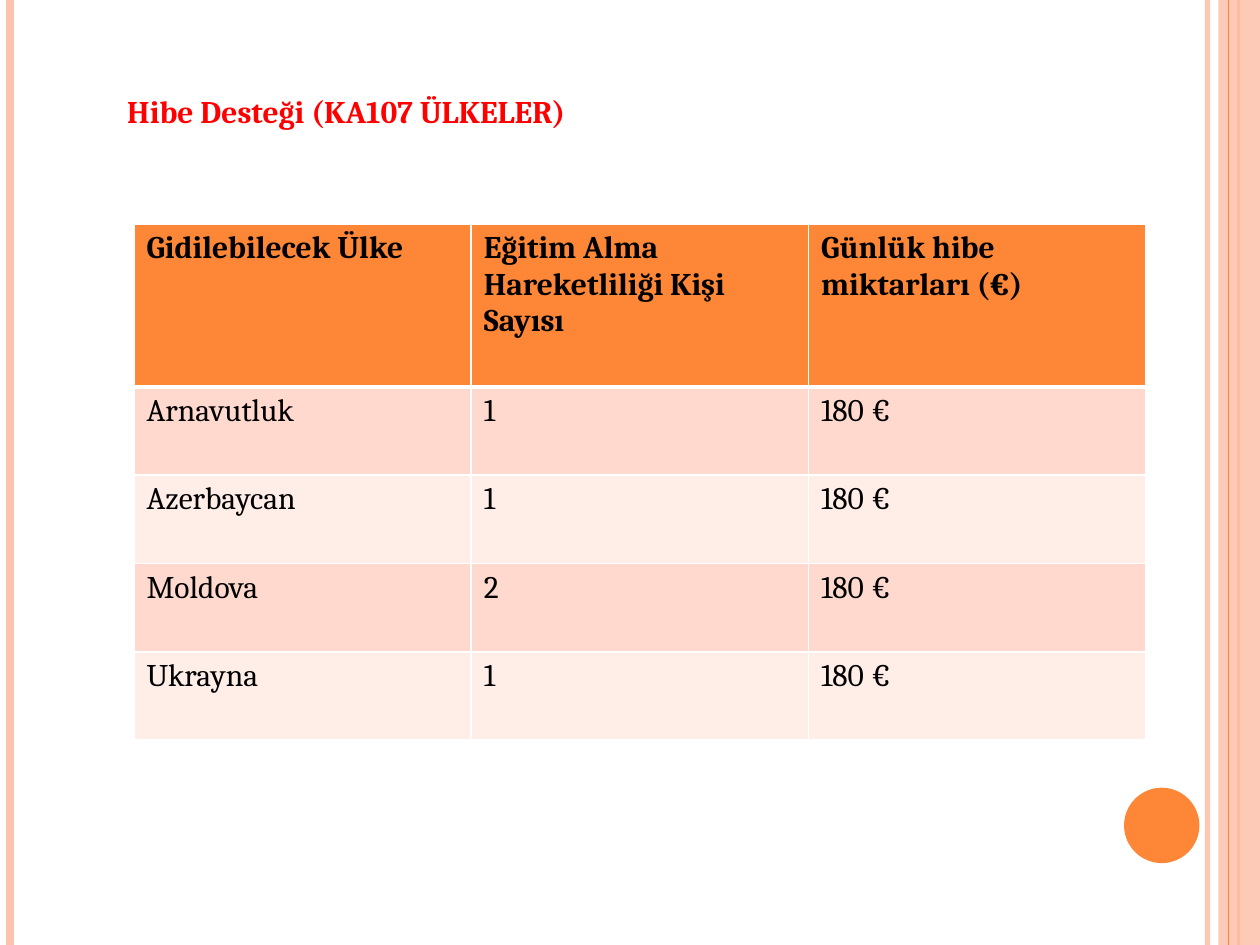
from lxml import etree
from pptx import Presentation
from pptx import util as u
from pptx.dml.color import RGBColor
from pptx.enum import shapes, text
from pptx.oxml.ns import qn

COLORS = {
    "orange": "FE8637", "peach": "FEC3AE", "red": "FF0000", "black": "000000",
    "white": "FFFFFF", "band_dark": "FFD9CE", "band_light": "FFEDE8",
}
FONT = "Cambria"
ROWS = [
    ("Gidilebilecek Ülke", "Eğitim Alma Hareketliliği Kişi Sayısı",
     "Günlük hibe miktarları (€)"),
    ("Arnavutluk", "1", "180 €"),
    ("Azerbaycan", "1", "180 €"),
    ("Moldova", "2", "180 €"),
    ("Ukrayna", "1", "180 €"),
]


def rgb(name):
    """Return the named palette colour."""
    return RGBColor.from_string(COLORS[name])


def set_alpha(fill, percent):
    """Make a solid fill or line partly transparent."""
    clr = fill._xPr.find(qn("a:solidFill"))[0]
    etree.SubElement(clr, qn("a:alpha")).set("val", str(percent * 1000))


def style_text(p, size, color, bold):
    """Format every run of a paragraph."""
    for r in p.runs:
        r.font.name = FONT
        r.font.size = u.Pt(size)
        r.font.bold = bold
        r.font.color.rgb = rgb(color)


def add_stripe(s, x, height, color, width, alpha=None):
    """Draw a full-height vertical line."""
    c = s.shapes.add_connector(shapes.MSO_CONNECTOR.STRAIGHT, x, 0, x, height)
    c.line.color.rgb = rgb(color)
    c.line.width = u.Pt(width)
    if alpha:
        set_alpha(c.line.fill, alpha)
    etree.SubElement(c._element.spPr, qn("a:effectLst"))


def add_solid(s, kind, color, left, top, width, height):
    """Add a filled preset shape without an outline."""
    sp = s.shapes.add_shape(kind, left, top, width, height)
    sp.shadow.inherit = False
    sp.fill.solid()
    sp.fill.fore_color.rgb = rgb(color)
    sp.line.fill.background()
    return sp


def add_frame(s, left, top, width, height):
    """Draw the edge stripes and the disc within the given box."""
    right = left + width
    add_stripe(s, right - u.Cm(1.06), height, "peach", 3, 93)
    add_stripe(s, left + u.Cm(0.21), height, "peach", 4.5)
    add_stripe(s, right - u.Cm(0.43), height, "orange", 1.5)
    band = add_solid(s, shapes.MSO_SHAPE.RECTANGLE, "peach",
                     right - u.Cm(0.84), top, u.Cm(0.84), height)
    set_alpha(band.fill, 87)
    add_stripe(s, right - u.Cm(0.64), height, "orange", 0.75)
    add_solid(s, shapes.MSO_SHAPE.OVAL, "orange", right - u.Cm(2.74),
              top + u.Cm(15.88), u.Cm(1.52), u.Cm(1.52))


def add_title(s, left, top, width, height):
    """Place and format the slide title."""
    sp = s.shapes.title
    sp.left, sp.top, sp.width, sp.height = left, top, width, height
    tf = sp.text_frame
    tf.text = "Hibe Desteği (KA107 ÜLKELER)"
    tf.word_wrap = False
    tf.auto_size = text.MSO_AUTO_SIZE.SHAPE_TO_FIT_TEXT
    tf.vertical_anchor = text.MSO_ANCHOR.TOP
    p = tf.paragraphs[0]
    p.alignment = text.PP_ALIGN.LEFT
    style_text(p, 18, "red", True)


def set_borders(cell, widths):
    """Give a cell white borders: left, right, top and bottom in points."""
    tc_pr = cell._tc.get_or_add_tcPr()
    for i, (side, width) in enumerate(zip("LRTB", widths)):
        ln = etree.Element(qn(f"a:ln{side}"), w=str(u.Pt(width)))
        fill = etree.SubElement(ln, qn("a:solidFill"))
        etree.SubElement(fill, qn("a:srgbClr")).set("val", COLORS["white"])
        tc_pr.insert(i, ln)


def add_grants(s, left, top, width, height):
    """Build the table of countries, places and daily grants."""
    tbl = s.shapes.add_table(len(ROWS), len(ROWS[0]), left, top, width, height).table
    row_height = u.Cm(1.78)
    for col in tbl.columns:
        col.width = width // len(ROWS[0])
    for i, values in enumerate(ROWS):
        header = i == 0
        body_rows = len(ROWS) - 1
        tbl.rows[i].height = height - body_rows * row_height if header else row_height
        color = "orange" if header else ("band_dark" if i % 2 else "band_light")
        for j, value in enumerate(values):
            cell = tbl.cell(i, j)
            cell.text = value
            style_text(cell.text_frame.paragraphs[0], 18, "black", header)
            cell.fill.solid()
            cell.fill.fore_color.rgb = rgb(color)
            set_borders(cell, (1, 1, 3 if i == 1 else 1, 3 if header else 1))


def main():
    """Create the presentation."""
    prs = Presentation()
    prs.slide_width, prs.slide_height = u.Cm(25.4), u.Cm(19.05)
    s = prs.slides.add_slide(prs.slide_layouts[5])
    s.background.fill.solid()
    s.background.fill.fore_color.rgb = rgb("white")
    add_frame(s, 0, 0, prs.slide_width, prs.slide_height)
    add_title(s, u.Cm(2.31), u.Cm(1.73), u.Cm(11.4), u.Cm(1.02))
    add_grants(s, u.Cm(2.7), u.Cm(4.52), u.Cm(20.4), u.Cm(10.4))
    prs.save("out.pptx")


if __name__ == "__main__":
    main()
